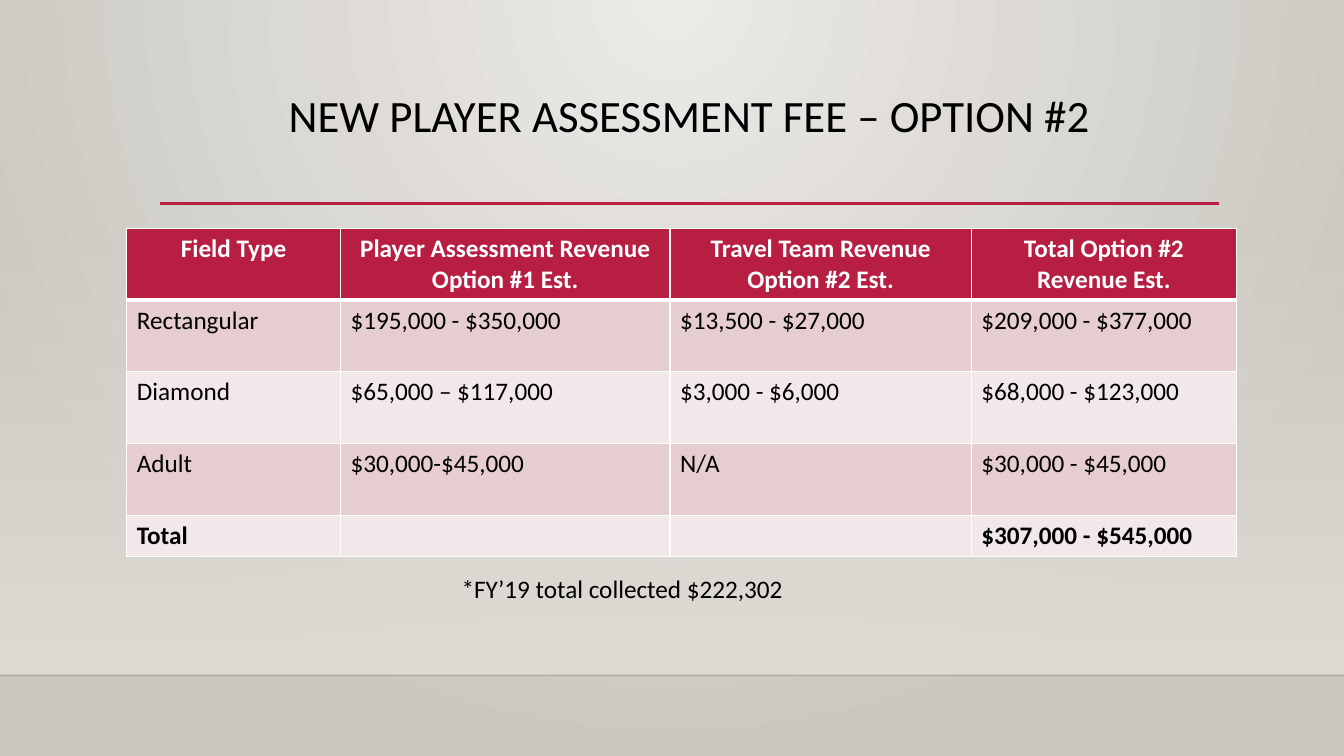
from dataclasses import dataclass

import lxml.etree
import pptx
import pptx.dml.color
import pptx.enum.shapes
import pptx.enum.text
import pptx.oxml.ns
import pptx.util

Pt = pptx.util.Pt
RGBColor = pptx.dml.color.RGBColor
Align = pptx.enum.text.PP_ALIGN
qn = pptx.oxml.ns.qn

BLACK = RGBColor(0x00, 0x00, 0x00)
WHITE = RGBColor(0xFF, 0xFF, 0xFF)
CRIMSON = RGBColor(0xB7, 0x1E, 0x42)
ROSE = RGBColor(0xE6, 0xCD, 0xCF)
PALE_ROSE = RGBColor(0xF3, 0xE8, 0xE9)
GLOW = RGBColor(0xEC, 0xEA, 0xE7)
STONE = RGBColor(0xCA, 0xC7, 0xC1)
SAND = RGBColor(0xDF, 0xDB, 0xD5)
SHELF = RGBColor(0x00, 0x00, 0x01)

SLIDE_WIDTH, SLIDE_HEIGHT = 960, 540
COLUMN_WIDTHS = (152.6, 235.4, 215.3, 189.4)
ROW_HEIGHTS = (51.25, 51.25, 51.25, 51.25, 29.3)


@dataclass(frozen=True)
class Rule:
    left: float
    right: float
    y: float
    weight: float
    color: RGBColor
    opacity: int = 100


@dataclass(frozen=True)
class FeeRow:
    cells: tuple[str, ...]
    fill: RGBColor
    color: RGBColor = BLACK
    bold: bool = False
    align: Align = Align.LEFT
    top: float = 1
    bottom: float = 1


RULES = (
    Rule(0, SLIDE_WIDTH, 482.4, 1, SHELF, opacity=20),
    Rule(114.5, 871, 145.4, 2.5, CRIMSON),
)

FEE_ROWS = (
    FeeRow(("Field Type", "Player Assessment Revenue Option #1 Est.",
            "Travel Team Revenue Option #2 Est.", "Total Option #2 Revenue Est."),
           CRIMSON, WHITE, bold=True, align=Align.CENTER, bottom=3),
    FeeRow(("Rectangular", "$195,000 - $350,000", "$13,500 - $27,000",
            "$209,000 - $377,000"), ROSE, top=3),
    FeeRow(("Diamond", "$65,000 – $117,000", "$3,000 - $6,000",
            "$68,000 - $123,000"), PALE_ROSE),
    FeeRow(("Adult", "$30,000-$45,000", "N/A", "$30,000 - $45,000"), ROSE),
    FeeRow(("Total", "", "", "$307,000 - $545,000"), PALE_ROSE, bold=True),
)


def write(frame, text: str, *, size: float = 18, color: RGBColor = BLACK,
          bold: bool = False, align: Align = Align.LEFT, spacing: float = 1) -> None:
    frame.word_wrap = True
    paragraph = frame.paragraphs[0]
    paragraph.alignment = align
    paragraph.line_spacing = spacing
    run = paragraph.add_run()
    run.text = text
    run.font.name = "Calibri"
    run.font.size = Pt(size)
    run.font.bold = bold
    run.font.color.rgb = color


def set_gradient(fill, start: RGBColor, end: RGBColor) -> None:
    fill.gradient()
    for stop, position, color in zip(fill.gradient_stops, (0, 1), (start, end)):
        stop.position = position
        stop.color.rgb = color


def set_opacity(element, percent: int) -> None:
    color = next(element.iter(qn("a:srgbClr")))
    lxml.etree.SubElement(color, qn("a:alpha"), val=str(percent * 1000))


def add_rule(slide, rule: Rule) -> None:
    line = slide.shapes.add_connector(
        pptx.enum.shapes.MSO_CONNECTOR.STRAIGHT,
        Pt(rule.left), Pt(rule.y), Pt(rule.right), Pt(rule.y))
    line.line.width = Pt(rule.weight)
    line.line.color.rgb = rule.color
    properties = line._element.spPr
    if rule.opacity < 100:
        set_opacity(properties, rule.opacity)
    lxml.etree.SubElement(properties, qn("a:effectLst"))


def set_borders(cell, top: float, bottom: float) -> None:
    properties = cell._tc.get_or_add_tcPr()
    for side, weight in (("L", 1), ("R", 1), ("T", top), ("B", bottom)):
        border = lxml.etree.SubElement(properties, qn(f"a:ln{side}"), w=str(Pt(weight)))
        solid = lxml.etree.SubElement(border, qn("a:solidFill"))
        lxml.etree.SubElement(solid, qn("a:srgbClr"), val=str(WHITE))


def add_fee_table(slide) -> None:
    table = slide.shapes.add_table(
        len(ROW_HEIGHTS), len(COLUMN_WIDTHS), Pt(90.6), Pt(163.2),
        Pt(sum(COLUMN_WIDTHS)), Pt(sum(ROW_HEIGHTS))).table
    for column, width in zip(table.columns, COLUMN_WIDTHS):
        column.width = Pt(width)
    for table_row, height, fee in zip(table.rows, ROW_HEIGHTS, FEE_ROWS):
        table_row.height = Pt(height)
        for cell, text in zip(table_row.cells, fee.cells):
            set_borders(cell, fee.top, fee.bottom)
            cell.fill.solid()
            cell.fill.fore_color.rgb = fee.fill
            if text:
                write(cell.text_frame, text, color=fee.color, bold=fee.bold,
                      align=fee.align)


def add_backdrop(slide) -> None:
    # Radial glow from the top centre
    set_gradient(slide.background.fill, GLOW, STONE)
    gradient = next(slide._element.iter(qn("a:gradFill")))
    gradient.remove(gradient.find(qn("a:lin")))
    glow = lxml.etree.SubElement(gradient, qn("a:path"), path="circle")
    lxml.etree.SubElement(glow, qn("a:fillToRect"),
                          l="43000", t="0", r="43000", b="100000")

    # Wall fading in downwards
    wall = slide.shapes.add_shape(pptx.enum.shapes.MSO_SHAPE.RECTANGLE,
                                  Pt(0), Pt(159.1), Pt(SLIDE_WIDTH), Pt(323.3))
    wall.shadow.inherit = False
    wall.line.fill.background()
    set_gradient(wall.fill, SAND, SAND)
    wall.fill.gradient_angle = 270
    set_opacity(wall._element.spPr, 0)


def main() -> None:
    deck = pptx.Presentation()
    deck.slide_width, deck.slide_height = Pt(SLIDE_WIDTH), Pt(SLIDE_HEIGHT)
    slide = deck.slides.add_slide(deck.slide_layouts[6])

    add_backdrop(slide)
    for rule in RULES:
        add_rule(slide, rule)

    # Heading
    heading = slide.shapes.add_textbox(Pt(114.5), Pt(63.4), Pt(756), Pt(82.8))
    write(heading.text_frame, "NEW PLAYER ASSESSMENT FEE – OPTION #2",
          size=32, align=Align.CENTER, spacing=0.9)

    add_fee_table(slide)

    # Footnote
    footnote = slide.shapes.add_textbox(Pt(322.6), Pt(406.1), Pt(400.3), Pt(29))
    write(footnote.text_frame, "*FY’19 total collected $222,302")

    deck.save("out.pptx")


if __name__ == "__main__":
    main()
